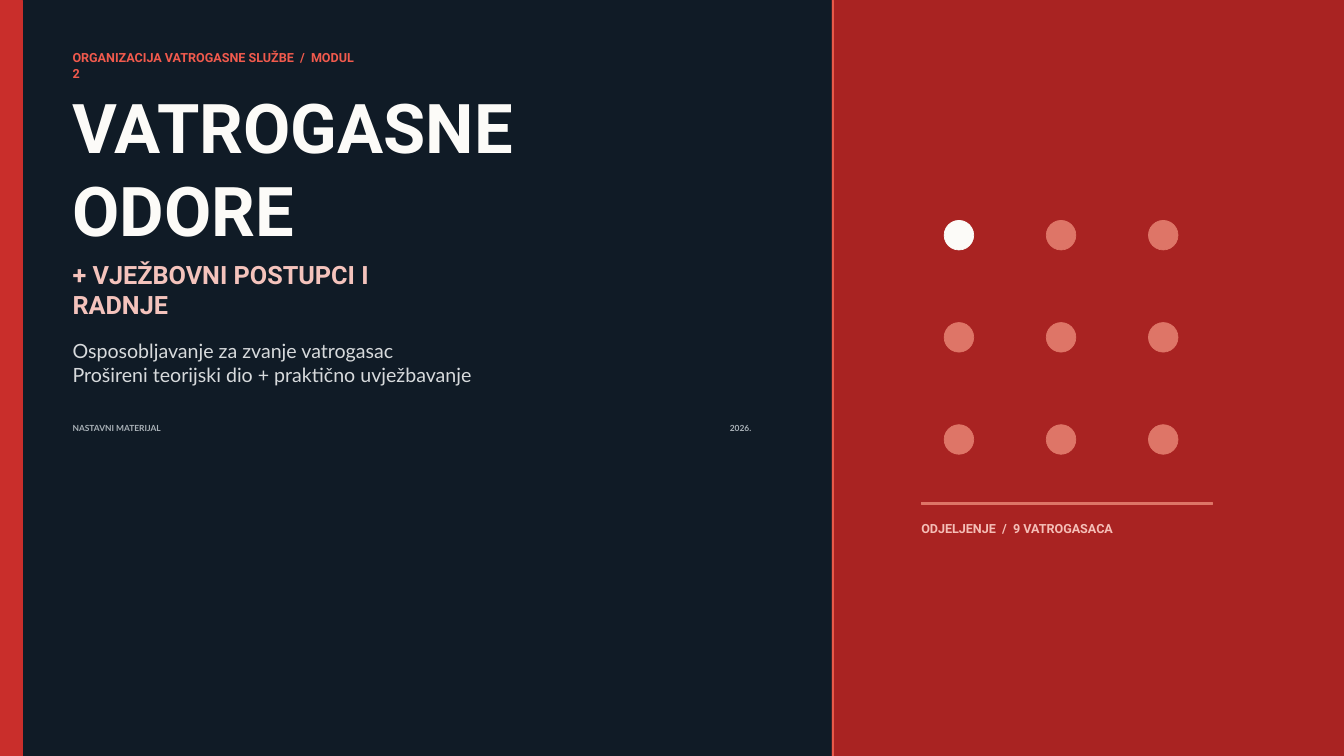
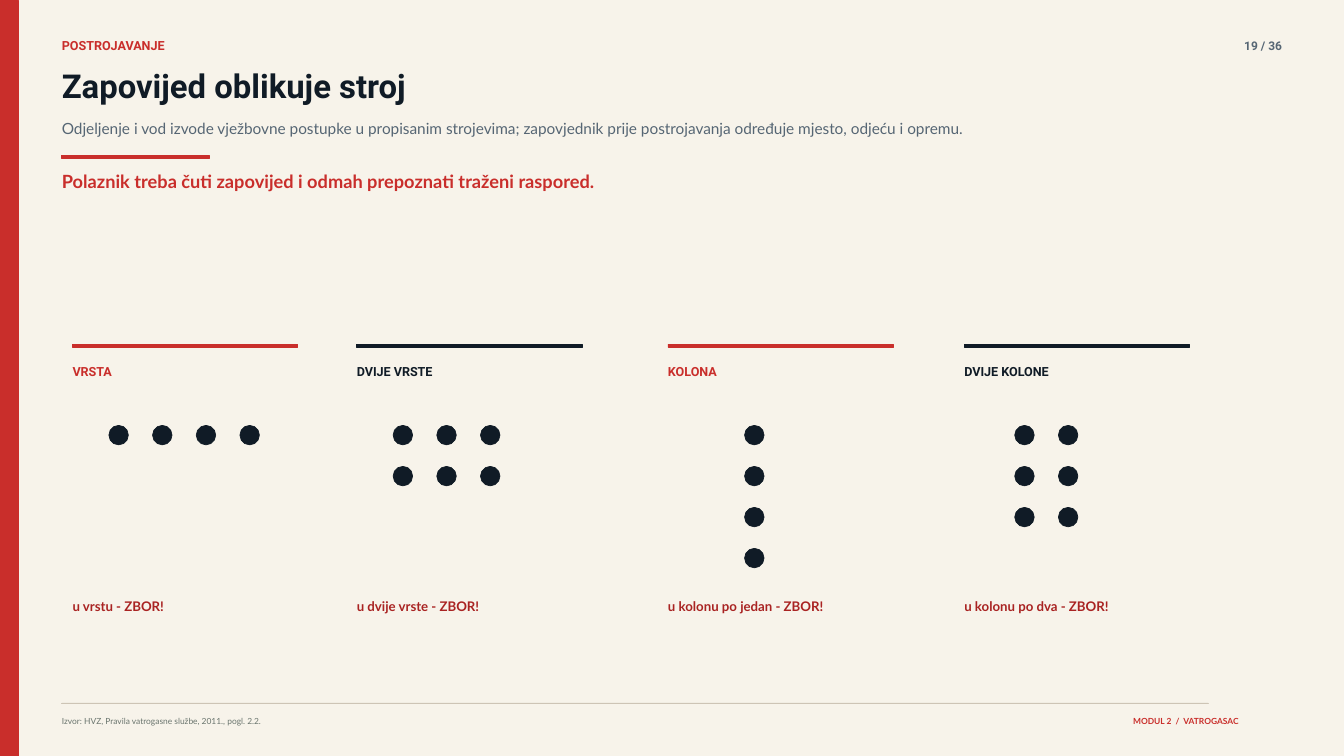
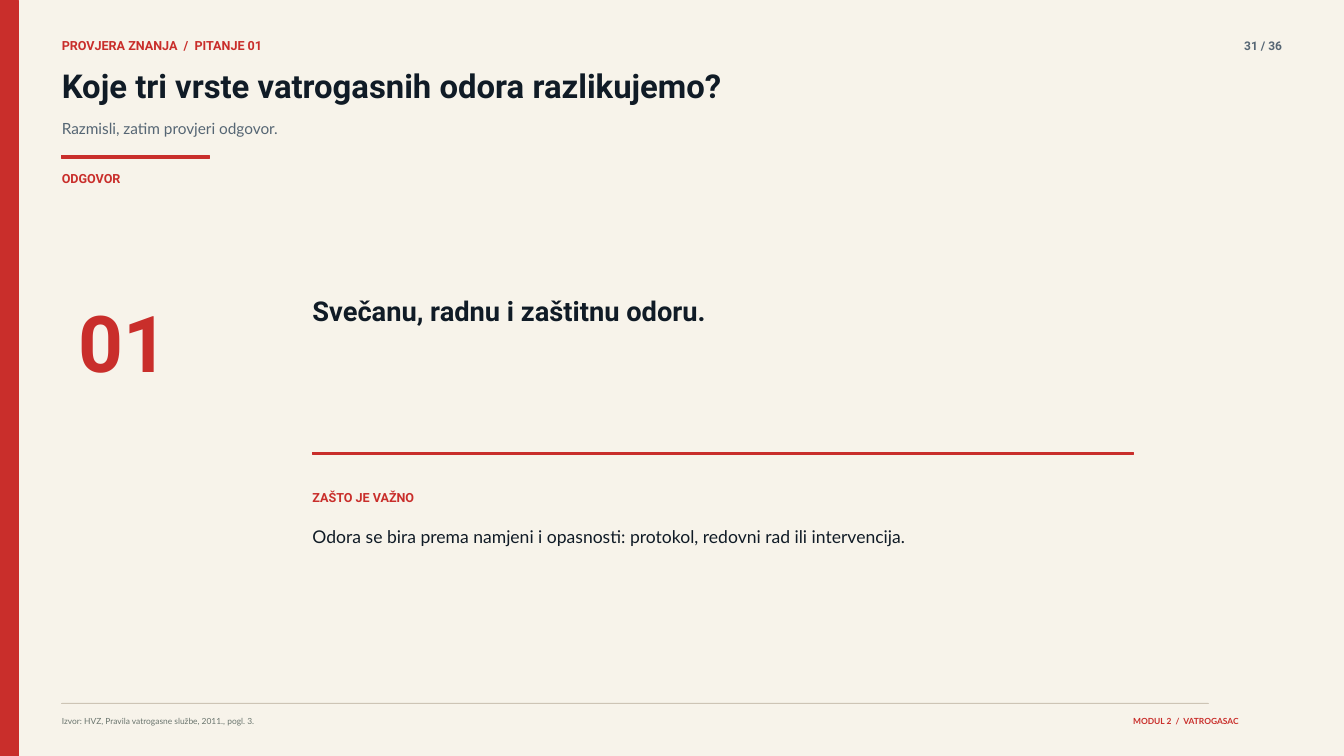
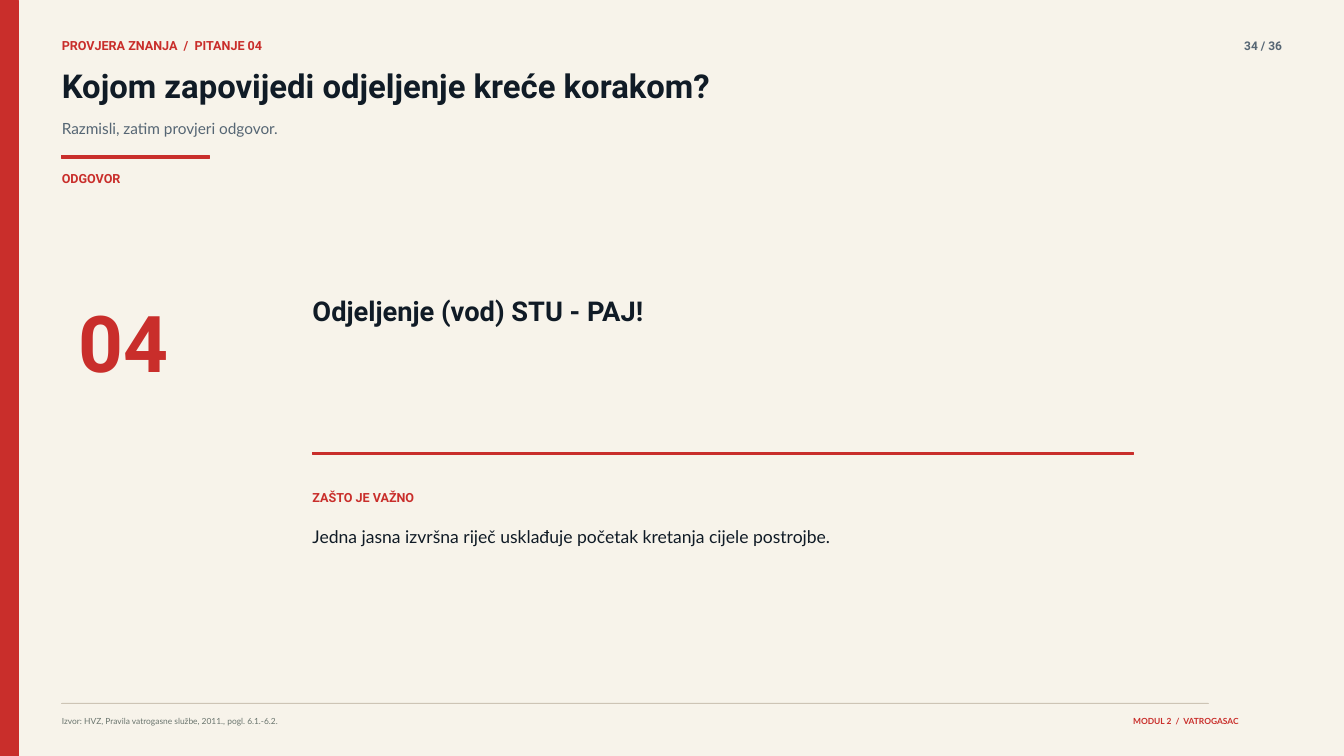
from pptx import Presentation
from pptx.dml.color import RGBColor
from pptx.enum.shapes import MSO_SHAPE as SHAPE
from pptx.enum.text import MSO_ANCHOR as ANCHOR, MSO_AUTO_SIZE as AUTO_SIZE, PP_ALIGN as ALIGN
from pptx.util import Inches, Pt

NAVY = RGBColor(0x10, 0x1B, 0x26)
CREAM = RGBColor(0xF7, 0xF3, 0xEA)
RED = RGBColor(0xC9, 0x2E, 0x2B)
DARK_RED = RGBColor(0xA9, 0x23, 0x22)
BRIGHT_RED = RGBColor(0xE8, 0x59, 0x49)
KICKER_RED = RGBColor(0xF1, 0x5A, 0x4D)
SALMON = RGBColor(0xDE, 0x75, 0x67)
PINK = RGBColor(0xF5, 0xBE, 0xB7)
PALE_PINK = RGBColor(0xF4, 0xC3, 0xBC)
WHITE = RGBColor(0xFC, 0xFB, 0xF8)
SILVER = RGBColor(0xD7, 0xDA, 0xDC)
GREY = RGBColor(0xAA, 0xB2, 0xB8)
SLATE = RGBColor(0x56, 0x66, 0x74)
SOURCE_GREY = RGBColor(0x6A, 0x75, 0x6E)
SAND = RGBColor(0xCD, 0xC4, 0xB5)

HEADING, BODY = "Roboto", "Lato"
WIDTH, HEIGHT = 20, 11.25
MARGIN = 0.92
COVER_LEFT = 1.08
PANEL_LEFT = 12.38
ANSWER_LEFT, ANSWER_WIDTH = 4.65, 12.21
TOTAL = 36


def new_slide(prs, color):
    slide = prs.slides.add_slide(prs.slide_layouts[5])
    slide.background.fill.solid()
    slide.background.fill.fore_color.rgb = color
    return slide


def add_block(slide, left, top, width, height, color, kind=SHAPE.RECTANGLE):
    sp = slide.shapes.add_shape(kind, Inches(left), Inches(top), Inches(width), Inches(height))
    sp.shadow.inherit = False
    sp.fill.solid()
    sp.fill.fore_color.rgb = color
    sp.line.color.rgb = color
    sp.line.width = Pt(0)


def add_dots(slide, left, top, columns, rows, size, pitch_x, pitch_y, color, first=None):
    """Draw a grid of dots; first is the colour of the top left one."""
    for i in range(columns * rows):
        row, column = divmod(i, columns)
        fill = first if first and i == 0 else color
        add_block(slide, left + column * pitch_x, top + row * pitch_y, size, size, fill, SHAPE.OVAL)


def style_text(sp, text, size, color, font, bold, align):
    tf = sp.text_frame
    tf.text = text
    tf.word_wrap = True
    tf.auto_size = AUTO_SIZE.NONE
    tf.vertical_anchor = ANCHOR.TOP
    tf.margin_left = tf.margin_top = tf.margin_right = tf.margin_bottom = 0
    for p in tf.paragraphs:
        p.alignment = align
        for r in p.runs:
            r.font.name = font
            r.font.size = Pt(size)
            r.font.bold = bold
            r.font.color.rgb = color


def add_text(slide, text, left, top, width, height, size, color, font=BODY, bold=False,
             align=ALIGN.LEFT):
    box = slide.shapes.add_textbox(Inches(left), Inches(top), Inches(width), Inches(height))
    style_text(box, text, size, color, font, bold, align)


def add_label(slide, text, left, top, width, color=RED):
    add_text(slide, text, left, top, width, 0.23, 13.5, color, HEADING, True)


def set_title(slide, text, left, top, width, height, size, color):
    title = slide.shapes.title
    title.left, title.top = Inches(left), Inches(top)
    title.width, title.height = Inches(width), Inches(height)
    style_text(title, text, size, color, HEADING, True, ALIGN.LEFT)


def content_slide(prs, number, section, title, subtitle, source):
    """Add a slide with the shared side band, heading and footer."""
    slide = new_slide(prs, CREAM)
    add_block(slide, 0, 0, 0.27, HEIGHT, RED)
    add_label(slide, section, MARGIN, 0.56, 7.92)
    add_text(slide, f"{number} / {TOTAL}", 17.83, 0.57, 1.25, 0.21, 12.8, SLATE, HEADING, True,
             ALIGN.RIGHT)
    set_title(slide, title, MARGIN, 0.98, 18.17, 0.62, 35.2, NAVY)
    add_text(slide, subtitle, MARGIN, 1.78, 18.17, 0.34, 16.5, SLATE)
    add_block(slide, MARGIN, 2.31, 2.19, 0.04, RED)
    add_block(slide, MARGIN, 10.46, 17.06, 0.01, SAND)
    add_text(slide, f"Izvor: HVZ, Pravila vatrogasne službe, 2011., pogl. {source}",
             MARGIN, 10.65, 14.27, 0.16, 9, SOURCE_GREY)
    add_text(slide, "MODUL 2  /  VATROGASAC", 16.35, 10.65, 2.08, 0.16, 9, RED, bold=True,
             align=ALIGN.RIGHT)
    return slide


def cover_slide(prs):
    slide = new_slide(prs, NAVY)
    add_block(slide, 0, 0, 0.33, HEIGHT, RED)
    add_block(slide, PANEL_LEFT, 0, WIDTH - PANEL_LEFT, HEIGHT, DARK_RED)
    add_block(slide, PANEL_LEFT, 0, 0.02, HEIGHT, BRIGHT_RED)
    add_dots(slide, 14.05, 3.28, 3, 3, 0.44, 1.52, 1.52, SALMON, first=WHITE)
    add_block(slide, 13.71, 7.48, 4.33, 0.02, SALMON)
    add_label(slide, "ODJELJENJE  /  9 VATROGASACA", 13.71, 7.75, 4.9, PINK)
    add_label(slide, "ORGANIZACIJA VATROGASNE SLUŽBE  /  MODUL 2", COVER_LEFT, 0.75, 4.19,
              KICKER_RED)
    set_title(slide, "VATROGASNE\nODORE", COVER_LEFT, 1.27, 9.79, 2.31, 73.5, WHITE)
    add_text(slide, "+ VJEŽBOVNI POSTUPCI I RADNJE", COVER_LEFT, 3.86, 5.67, 0.91, 27, PALE_PINK,
             HEADING, True)
    add_text(slide, "Osposobljavanje za zvanje vatrogasac\n"
             "Prošireni teorijski dio + praktično uvježbavanje",
             COVER_LEFT, 5.05, 6, 0.95, 21, SILVER)
    add_text(slide, "NASTAVNI MATERIJAL", COVER_LEFT, 6.29, 1.32, 0.3, 9, GREY, bold=True)
    add_text(slide, "2026.", 10.86, 6.29, 0.32, 0.3, 9, GREY, bold=True)


def add_formation(slide, left, name, color, dots_left, columns, rows, command):
    add_block(slide, left, 5.12, 3.35, 0.05, color)
    add_label(slide, name, left, 5.42, 3.44, color)
    add_dots(slide, dots_left, 6.33, columns, rows, 0.29, 0.65, 0.61, NAVY)
    add_text(slide, f"{command} - ZBOR!", left, 8.9, 3.65, 0.3, 14.2, DARK_RED, bold=True)


def formations_slide(prs):
    slide = content_slide(
        prs, 19, "POSTROJAVANJE", "Zapovijed oblikuje stroj",
        "Odjeljenje i vod izvode vježbovne postupke u propisanim strojevima; "
        "zapovjednik prije postrojavanja određuje mjesto, odjeću i opremu.", "2.2.")
    add_text(slide, "Polaznik treba čuti zapovijed i odmah prepoznati traženi raspored.",
             MARGIN, 2.54, 8.46, 0.41, 19.5, RED, bold=True)
    formations = [
        (1.08, "VRSTA", RED, 1.62, 4, 1, "u vrstu"),
        (5.31, "DVIJE VRSTE", NAVY, 5.85, 3, 2, "u dvije vrste"),
        (9.94, "KOLONA", RED, 11.08, 1, 4, "u kolonu po jedan"),
        (14.35, "DVIJE KOLONE", NAVY, 15.1, 2, 3, "u kolonu po dva"),
    ]
    for formation in formations:
        add_formation(slide, *formation)


def question_slide(prs, page, number, question, answer, reason, source):
    slide = content_slide(prs, page, f"PROVJERA ZNANJA  /  PITANJE {number}", question,
                          "Razmisli, zatim provjeri odgovor.", source)
    add_label(slide, "ODGOVOR", MARGIN, 2.54, 2.19)
    add_text(slide, number, 1.17, 4.38, 2.29, 1.41, 84, RED, HEADING, True)
    add_text(slide, answer, ANSWER_LEFT, 4.38, ANSWER_WIDTH, 0.55, 29.2, NAVY, HEADING, True)
    add_block(slide, ANSWER_LEFT, 6.73, ANSWER_WIDTH, 0.03, RED)
    add_label(slide, "ZAŠTO JE VAŽNO", ANSWER_LEFT, 7.29, 3.75)
    add_text(slide, reason, ANSWER_LEFT, 7.83, 12.08, 0.41, 18.8, NAVY)


def main():
    prs = Presentation()
    prs.slide_width, prs.slide_height = Inches(WIDTH), Inches(HEIGHT)
    cover_slide(prs)
    formations_slide(prs)
    question_slide(
        prs, 31, "01", "Koje tri vrste vatrogasnih odora razlikujemo?",
        "Svečanu, radnu i zaštitnu odoru.",
        "Odora se bira prema namjeni i opasnosti: protokol, redovni rad ili intervencija.", "3.")
    question_slide(
        prs, 34, "04", "Kojom zapovijedi odjeljenje kreće korakom?",
        "Odjeljenje (vod) STU - PAJ!",
        "Jedna jasna izvršna riječ usklađuje početak kretanja cijele postrojbe.", "6.1.-6.2.")
    prs.save("out.pptx")


if __name__ == "__main__":
    main()
